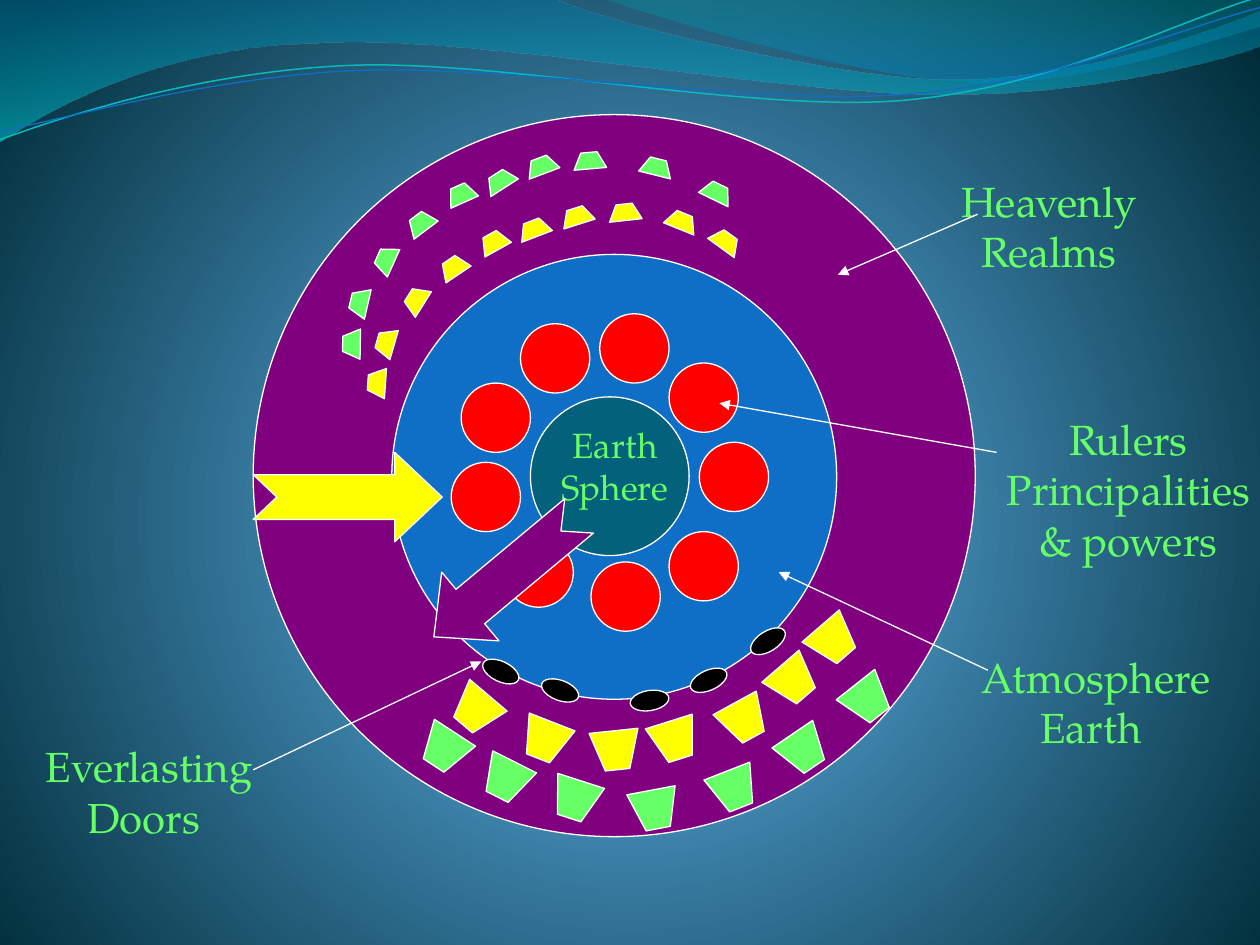
from itertools import chain
from typing import NamedTuple

from lxml.etree import SubElement
from pptx import Presentation
from pptx.dml.color import RGBColor
from pptx.enum.shapes import MSO_CONNECTOR, MSO_SHAPE
from pptx.enum.text import PP_ALIGN
from pptx.oxml import parse_xml
from pptx.oxml.ns import nsdecls, qn
from pptx.util import Pt

FONT = "TeX Gyre Pagella"
WHITE, BLACK, RED = "FFFFFF", "000000", "FF0000"
YELLOW, GREEN, PURPLE, BLUE, TEAL = "FFFF00", "66FF66", "800080", "0F6FC6", "04617B"
CURVE_STEPS = 24


class Stop(NamedTuple):
    position: int
    color: str
    opacity: int = 100


class Wave(NamedTuple):
    """A start point, then segments: two numbers for a line, six for a curve."""
    start: tuple
    segments: list
    stops: tuple = ()
    line: str = ""
    width: float = 0


class Ring(NamedTuple):
    """Like shapes of one size; each place is left, top and rotation."""
    kind: MSO_SHAPE
    width: float
    height: float
    color: str
    places: list


class Label(NamedTuple):
    left: float
    top: float
    width: float
    height: float
    lines: tuple
    size: int = 24


WAVES = [
    Wave((0, 0), [(316.8, -0.7), (342.7, 12.2, 478.1, 45.4, 545.8, 45.4),
                  (614.2, 45.4, 689.8, 18.7, 720, 6.5), (720.7, 25.9),
                  (707.8, 31.7, 626.4, 54.7, 537.1, 54), (447.8, 54, 275, 20.2, 185, 24.5),
                  (92.9, 25.9, 33.1, 59.8, -0.7, 81.4)],
         stops=(Stop(0, "0074A1", 45), Stop(100, "00C6CF", 55))),
    Wave((344.9, -0.7), [(366.5, 7.9, 491, 44.6, 553.7, 46.8),
                         (616.3, 49.7, 691.9, 23, 720, 15.1), (720, 0)],
         stops=(Stop(0, "00A1A9", 30), Stop(80, "008BBF", 45))),
    Wave((0, 79.9), [(34.6, 67, 113.8, 41, 199.4, 37.4), (284.4, 33.8, 427, 64.1, 513.4, 57.6),
                     (599.8, 51.1, 675.4, 10.8, 718.6, -1.4)], line="0AB8BF", width=0.85),
    Wave((0, 74.9), [(33.8, 69.1, 118.1, 43.9, 203.8, 40.3), (290.2, 36.7, 429.8, 60.5, 516.2, 54),
                     (601.9, 48.2, 677.5, 15.1, 720, 4.3)], line=BLUE, width=0.75),
]

SPHERES = [
    Ring(MSO_SHAPE.OVAL, 412.6, 412.6, PURPLE, [(144.7, 65.5, 0)]),
    Ring(MSO_SHAPE.OVAL, 254.2, 254.2, BLUE, [(223.9, 145.4, 0)]),
    Ring(MSO_SHAPE.OVAL, 90.7, 90.7, TEAL, [(303.1, 226.8, 0)]),
    Ring(MSO_SHAPE.OVAL, 39.6, 39.6, RED, [
        (342.7, 179.3, 0), (297.4, 185, 0), (263.5, 218.9, 0), (257.8, 264.2, 0), (288, 307.4, 0),
        (337.7, 321.1, 0), (382.3, 207.4, 0), (399.6, 252.7, 0), (382.3, 303.8, 0)]),
]

LABELS = [
    Label(541.4, 372.2, 164.2, 58.3, (" Atmosphere Earth",)),
    Label(569.5, 236.2, 150.5, 87.1, ("Rulers Principalities & powers",)),
    Label(308.9, 241.9, 85, 48.2, ("Earth", "Sphere"), 20),
    Label(529.9, 100.1, 139, 58.3, ("Heavenly", "Realms")),
    Label(0, 423.4, 164.2, 58.3, (" Everlasting Doors",)),
]

POINTERS = [(564.5, 383, 445, 326.9), (558.7, 122.4, 478.8, 157),
            (569.5, 258.5, 411.1, 230.4), (144.7, 439.9, 275, 378)]

MARKS = [
    Ring(MSO_SHAPE.NOTCHED_RIGHT_ARROW, 108, 51.1, YELLOW, [(144.7, 258.5, 0)]),
    Ring(MSO_SHAPE.NOTCHED_RIGHT_ARROW, 108, 51.1, PURPLE, [(235.4, 303.8, 140.2)]),
    Ring(MSO_SHAPE.TRAPEZOID, 18.7, 9.4, YELLOW, [
        (405.4, 133.2, 36), (380.2, 121.7, 22), (347.8, 116.6, 353.7),
        (320.4, 118.8, 342.5), (295.9, 126, 339)]),
    Ring(MSO_SHAPE.TRAPEZOID, 17.3, 10.1, YELLOW, [
        (273.6, 133.2, 331), (250.6, 147.6, 326.1), (229, 166.3, 302),
        (211.7, 190.8, 286.1), (206.6, 213.8, 273.9)]),
    Ring(MSO_SHAPE.TRAPEZOID, 18.7, 9.4, GREEN, [
        (400.3, 105.1, 26), (365.8, 90.7, 14), (327.6, 87.1, 355),
        (300.2, 90, 339.4), (276.5, 98.6, 327.2)]),
    Ring(MSO_SHAPE.TRAPEZOID, 17.3, 10.1, GREEN, [
        (254.9, 105.8, 336), (231.8, 122.4, 323), (211.7, 143.3, 294.2),
        (196.6, 167.8, 283), (192.2, 191.5, 270.9)]),
    Ring(MSO_SHAPE.OVAL, 22.3, 11.5, BLACK, [
        (275, 378, 25.6), (308.9, 388.8, 20.5), (360, 394.6, 350.9),
        (393.8, 383, 335.9), (427.7, 360.7, 327.9)]),
    Ring(MSO_SHAPE.TRAPEZOID, 28.1, 22.3, YELLOW, [
        (257.8, 394.6, 220.3), (297.4, 411.8, 201.3), (371.5, 411.8, 162.5), (411.1, 400.3, 151.3),
        (439.2, 378, 139.2), (337.7, 417.6, 174), (462.2, 355, 139.2)]),
    Ring(MSO_SHAPE.TRAPEZOID, 28.1, 22.3, GREEN, [
        (239.8, 416.9, 213.2), (314.6, 445.7, 197.9), (405.4, 439.9, 158.6), (445, 417.6, 145.8),
        (481.7, 388.8, 141.7), (360, 451.4, 169.3), (275, 434.2, 206.7)]),
]


def rgb(color: str) -> RGBColor:
    return RGBColor.from_string(color)


def gradient(stops: tuple, direction: str):
    stop_xml = "".join(
        f'<a:gs pos="{stop.position * 1000}"><a:srgbClr val="{stop.color}">'
        f'<a:alpha val="{stop.opacity * 1000}"/></a:srgbClr></a:gs>' for stop in stops)
    return parse_xml(f'<a:gradFill {nsdecls("a")} rotWithShape="1">'
                     f'<a:gsLst>{stop_xml}</a:gsLst>{direction}</a:gradFill>')


def paint_background(slide) -> None:
    slide.background.fill.solid()
    properties = slide.background._cSld.bg.bgPr
    stops = (Stop(0, "4AA0D6"), Stop(25, "4C98C7"), Stop(100, "002C38"))
    focus = ('<a:path path="circle"><a:fillToRect l="10000" t="110000" '
             'r="10000" b="100000"/></a:path>')
    properties.replace(properties.find(qn("a:solidFill")), gradient(stops, focus))


def curve(start: tuple, segment: tuple) -> list:
    """Points along a cubic curve, without its start."""
    controls = [start, segment[:2], segment[2:4], segment[4:]]
    points = []
    for step in range(1, CURVE_STEPS + 1):
        t = step / CURVE_STEPS
        weights = ((1 - t) ** 3, 3 * t * (1 - t) ** 2, 3 * t * t * (1 - t), t ** 3)
        points.append(tuple(sum(w * c[axis] for w, c in zip(weights, controls))
                            for axis in (0, 1)))
    return points


def draw_wave(slide, wave: Wave) -> None:
    points = [wave.start]
    for segment in wave.segments:
        points += [segment] if len(segment) == 2 else curve(points[-1], segment)
    corners = [(Pt(x), Pt(y)) for x, y in points]
    builder = slide.shapes.build_freeform(*corners[0], scale=1.0)
    builder.add_line_segments(corners[1:], close=bool(wave.stops))
    shape = builder.convert_to_shape()
    shape.shadow.inherit = False
    if wave.stops:
        shape.line.fill.background()
        shape.fill.solid()
        properties = shape._element.spPr
        properties.replace(properties.find(qn("a:solidFill")),
                           gradient(wave.stops, '<a:lin ang="5400000" scaled="1"/>'))
    else:
        shape.fill.background()
        shape.line.color.rgb = rgb(wave.line)
        shape.line.width = Pt(wave.width)


def draw_ring(slide, ring: Ring) -> None:
    for left, top, rotation in ring.places:
        shape = slide.shapes.add_shape(ring.kind, Pt(left), Pt(top), Pt(ring.width), Pt(ring.height))
        shape.rotation = rotation
        shape.shadow.inherit = False
        shape.fill.solid()
        shape.fill.fore_color.rgb = rgb(ring.color)
        shape.line.color.rgb = rgb(WHITE)
        shape.line.width = Pt(0.75)
        if ring.kind == MSO_SHAPE.TRAPEZOID:
            shape.adjustments[0] = 0.25 * ring.width / ring.height
        elif ring.kind == MSO_SHAPE.NOTCHED_RIGHT_ARROW:
            shape.adjustments[1] = 0.53


def draw_label(slide, label: Label) -> None:
    box = slide.shapes.add_textbox(*map(Pt, label[:4]))
    frame = box.text_frame
    frame.word_wrap = True
    frame.margin_left = frame.margin_right = frame.margin_top = frame.margin_bottom = 0
    paragraph = frame.paragraphs[0]
    paragraph.alignment = PP_ALIGN.CENTER
    for index, line in enumerate(label.lines):
        if index:
            paragraph.add_line_break()
        run = paragraph.add_run()
        run.text = line
        run.font.name = FONT
        run.font.size = Pt(label.size)
        run.font.color.rgb = rgb(GREEN)


def draw_pointer(slide, ends: tuple) -> None:
    connector = slide.shapes.add_connector(MSO_CONNECTOR.STRAIGHT, *map(Pt, ends))
    connector.line.color.rgb = rgb(WHITE)
    connector.line.width = Pt(0.75)
    SubElement(connector.line._get_or_add_ln(), qn("a:tailEnd"), type="triangle")
    SubElement(connector._element.spPr, qn("a:effectLst"))


def main() -> None:
    presentation = Presentation()
    presentation.slide_width, presentation.slide_height = Pt(720), Pt(540)
    slide = presentation.slides.add_slide(presentation.slide_layouts[6])
    paint_background(slide)
    steps = chain(((draw_wave, wave) for wave in WAVES), ((draw_ring, ring) for ring in SPHERES),
                  ((draw_label, label) for label in LABELS),
                  ((draw_ring, ring) for ring in MARKS[:1]),
                  ((draw_pointer, ends) for ends in POINTERS),
                  ((draw_ring, ring) for ring in MARKS[1:]))
    for draw, item in steps:
        draw(slide, item)
    presentation.save("out.pptx")


if __name__ == "__main__":
    main()
